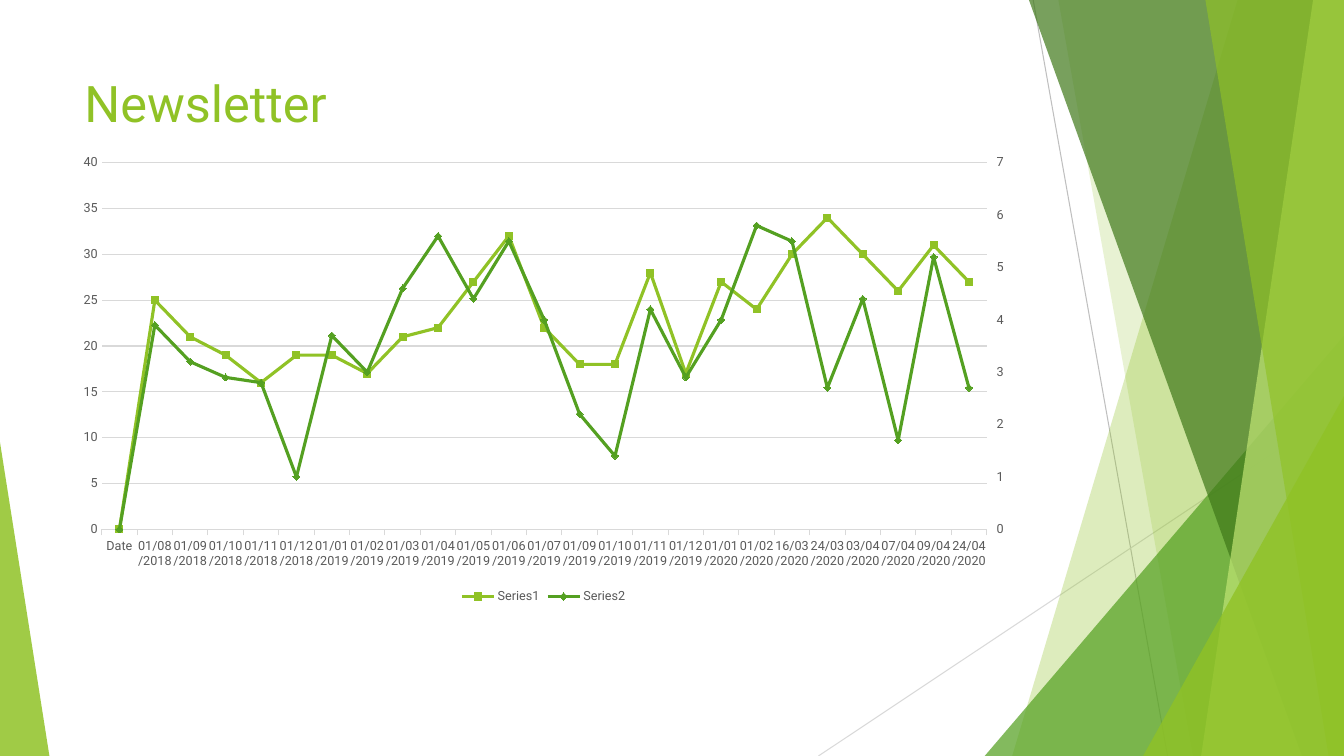
from copy import deepcopy

from lxml import etree
from pptx import Presentation
from pptx.chart.data import CategoryChartData
from pptx.dml.color import RGBColor
from pptx.enum.chart import XL_CHART_TYPE, XL_LEGEND_POSITION, XL_TICK_MARK
from pptx.enum.shapes import MSO_CONNECTOR, MSO_SHAPE
from pptx.enum.text import MSO_ANCHOR
from pptx.oxml.ns import qn
from pptx.util import Pt

STACKED_LINE = XL_CHART_TYPE.LINE_STACKED
LEGEND_BOTTOM = XL_LEGEND_POSITION.BOTTOM
TICK_NONE, TICK_OUT = XL_TICK_MARK.NONE, XL_TICK_MARK.OUTSIDE
STRAIGHT = MSO_CONNECTOR.STRAIGHT
TRIANGLE = MSO_SHAPE.ISOSCELES_TRIANGLE
ANCHOR_TOP = MSO_ANCHOR.TOP

FONT = "Roboto"
COLORS = {
    "lime": "90C226", "green": "54A021", "forest": "3F7819", "pale": "C0E474",
    "ray": "BFBFBF", "grid": "D9D9D9", "label": "595959", "black": "000000",
}
WIDTH, HEIGHT = 960, 540

# Thin rays: start x, start y, end x, end y, colour
RAYS = [(738, 0, 834, 540, "ray"), (960, 290, 584.6, 540, "grid")]
# Bands reach the right edge: top x, bottom x, colour, opacity
BACK_BANDS = [(884, 723, "lime", 30), (756, 852, "lime", 20)]
FRONT_BANDS = [(735, 930, "forest", 70), (938, 858, "pale", 70), (861, 949, "lime", 65)]
# Wedges stand on the bottom edge: left, right, top, tip, colour, opacity
BACK_WEDGES = [(703.4, 960, 239.8, 1, "green", 72)]
FRONT_WEDGES = [(816.5, 960, 283, 1, "lime", 80), (0, 35.3, 316, 0, "lime", 85)]

DATES = ["Date"] + (
    "01/08/2018 01/09/2018 01/10/2018 01/11/2018 01/12/2018 01/01/2019 "
    "01/02/2019 01/03/2019 01/04/2019 01/05/2019 01/06/2019 01/07/2019 "
    "01/09/2019 01/10/2019 01/11/2019 01/12/2019 01/01/2020 01/02/2020 "
    "16/03/2020 24/03/2020 03/04/2020 07/04/2020 09/04/2020 24/04/2020"
).split()
SERIES = {
    "Series1": ("lime", [0, 25, 21, 19, 16, 19, 19, 17, 21, 22, 27, 32, 22, 18, 18,
                         28, 17, 27, 24, 30, 34, 30, 26, 31, 27]),
    "Series2": ("green", [0, 3.9, 3.2, 2.9, 2.8, 1, 3.7, 3, 4.6, 5.6, 4.4, 5.5, 4, 2.2,
                          1.4, 4.2, 2.9, 4, 5.8, 5.5, 2.7, 4.4, 1.7, 5.2, 2.7]),
}


def rgb(name):
    return RGBColor.from_string(COLORS[name])


def style_font(font, size, color):
    font.name, font.size, font.bold = FONT, Pt(size), False
    font.color.rgb = rgb(color)


def style_line(line, color, width):
    line.color.rgb = rgb(color)
    line.width = Pt(width)


def paint(shape, color, opacity):
    shape.shadow.inherit = False
    shape.fill.solid()
    shape.fill.fore_color.rgb = rgb(color)
    shape.line.fill.background()
    color_element = shape.fill._xPr.find(".//" + qn("a:srgbClr"))
    etree.SubElement(color_element, qn("a:alpha")).set("val", str(opacity * 1000))


def add_rays(slide, left, top):
    for x1, y1, x2, y2, color in RAYS:
        ray = slide.shapes.add_connector(
            STRAIGHT, Pt(left + x1), Pt(top + y1), Pt(left + x2), Pt(top + y2))
        style_line(ray.line, color, 0.75)
        etree.SubElement(ray.element.spPr, qn("a:effectLst"))


def add_bands(slide, bands, left, top, width, height):
    right, bottom = left + width, top + height
    for top_x, bottom_x, color, opacity in bands:
        builder = slide.shapes.build_freeform(left + top_x, top, scale=Pt(1))
        builder.add_line_segments(
            [(right, top), (right, bottom), (left + bottom_x, bottom)], close=True)
        paint(builder.convert_to_shape(), color, opacity)


def add_wedges(slide, wedges, left, top, height):
    for start, end, peak, tip, color, opacity in wedges:
        wedge = slide.shapes.add_shape(
            TRIANGLE, Pt(left + start), Pt(top + peak), Pt(end - start), Pt(height - peak))
        wedge.adjustments[0] = tip
        paint(wedge, color, opacity)


def add_facets(slide, left, top, width, height):
    add_rays(slide, left, top)
    add_bands(slide, BACK_BANDS, left, top, width, height)
    add_wedges(slide, BACK_WEDGES, left, top, height)
    add_bands(slide, FRONT_BANDS, left, top, width, height)
    add_wedges(slide, FRONT_WEDGES, left, top, height)


def add_title(slide, left, top, width, height):
    text_frame = slide.shapes.add_textbox(Pt(left), Pt(top), Pt(width), Pt(height)).text_frame
    text_frame.word_wrap = True
    text_frame.vertical_anchor = ANCHOR_TOP
    text_frame.text = "Newsletter"
    style_font(text_frame.paragraphs[0].runs[0].font, 36, "lime")


def set_scale(element, maximum, step):
    element.find(qn("c:scaling")).find(qn("c:max")).set("val", str(maximum))
    element.find(qn("c:majorUnit")).set("val", str(step))


def move_to_right_axis(chart):
    """Give the second series its own plot and a value axis on the right."""
    left_plot = chart.element.find(".//" + qn("c:lineChart"))
    right_plot = deepcopy(left_plot)
    left_plot.remove(left_plot.findall(qn("c:ser"))[1])
    right_plot.remove(right_plot.findall(qn("c:ser"))[0])
    left_plot.addnext(right_plot)

    category_axis = chart.category_axis._element
    value_axis = chart.value_axis._element
    right_values, hidden_dates = deepcopy(value_axis), deepcopy(category_axis)
    value_axis.addnext(right_values)
    right_values.addnext(hidden_dates)

    new_ids = {category_axis.find(qn("c:axId")).get("val"): "50010",
               value_axis.find(qn("c:axId")).get("val"): "50020"}
    for element in (right_plot, right_values, hidden_dates):
        for tag in ("c:axId", "c:crossAx"):
            for reference in element.findall(qn(tag)):
                reference.set("val", new_ids[reference.get("val")])

    hidden_dates.find(qn("c:delete")).set("val", "1")
    right_values.remove(right_values.find(qn("c:majorGridlines")))
    right_values.find(qn("c:axPos")).set("val", "r")
    right_values.find(qn("c:crosses")).set("val", "max")
    right_values.find(qn("c:majorTickMark")).set("val", "out")
    set_scale(right_values, 7, 1)


def add_chart(slide, left, top, width, height):
    data = CategoryChartData()
    data.categories = DATES
    for name, (_, values) in SERIES.items():
        data.add_series(name, values)
    chart = slide.shapes.add_chart(
        STACKED_LINE, Pt(left), Pt(top), Pt(width), Pt(height), data).chart
    style_font(chart.font, 10, "black")
    chart.has_title = False

    # Legend
    chart.has_legend = True
    chart.legend.position = LEGEND_BOTTOM
    chart.legend.include_in_layout = False
    style_font(chart.legend.font, 9, "label")

    # Axes
    for axis, tick in ((chart.category_axis, TICK_OUT), (chart.value_axis, TICK_NONE)):
        axis.major_tick_mark, axis.minor_tick_mark = tick, TICK_NONE
        style_font(axis.tick_labels.font, 9, "label")
    style_line(chart.category_axis.format.line, "grid", 0.75)
    value_axis = chart.value_axis
    value_axis.minimum_scale, value_axis.maximum_scale, value_axis.major_unit = 0, 40, 5
    value_axis.format.line.fill.background()
    value_axis.has_major_gridlines = True
    style_line(value_axis.major_gridlines.format.line, "grid", 0.75)

    # Lines
    for series in chart.plots[0].series:
        series.smooth = False
        style_line(series.format.line, SERIES[series.name][0], 2.25)
        series.marker.style = None
    move_to_right_axis(chart)


def main():
    presentation = Presentation()
    presentation.slide_width, presentation.slide_height = Pt(WIDTH), Pt(HEIGHT)
    slide = presentation.slides.add_slide(presentation.slide_layouts[6])
    add_facets(slide, 0, 0, WIDTH, HEIGHT)
    add_title(slide, 53.3, 48, 676.8, 104)
    add_chart(slide, 46, 104.4, 684.7, 329.8)
    presentation.save("out.pptx")


if __name__ == "__main__":
    main()
